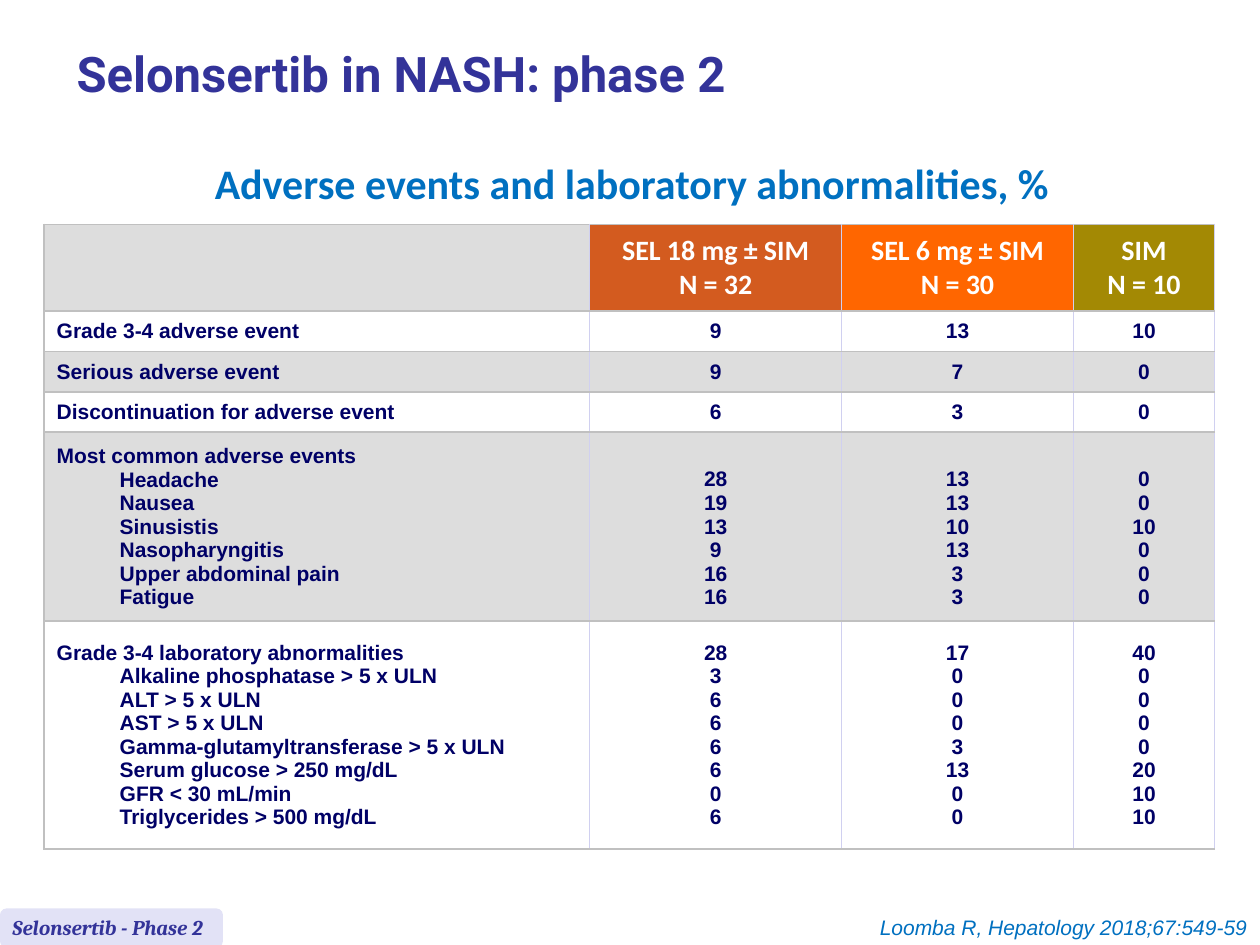
from dataclasses import dataclass

from pptx import Presentation
from pptx.dml.color import RGBColor as Rgb
from pptx.enum.shapes import MSO_AUTO_SHAPE_TYPE as Preset
from pptx.enum.text import MSO_VERTICAL_ANCHOR as Anchor
from pptx.enum.text import PP_PARAGRAPH_ALIGNMENT as Align
from pptx.oxml.xmlchemy import OxmlElement as Element
from pptx.util import Inches, Pt


@dataclass(frozen=True)
class Theme:
    indigo: str = "333399"
    blue: str = "0070C0"
    navy: str = "000066"
    white: str = "FFFFFF"
    band: str = "DDDDDD"
    tag: str = "E2E2F6"
    rule: str = "C0C0C0"
    divider: str = "D0D0F0"
    arms: tuple = ("D35B1F", "FF6600", "A38904")
    title: int = 28
    subtitle: int = 24
    header: int = 16
    body: int = 12


THEME = Theme()
SLIDE_WIDTH, SLIDE_HEIGHT = Inches(10), Inches(7.5)

TITLE_FONT = dict(name="Roboto", size=THEME.title, bold=True, color=THEME.indigo)
SUBTITLE_FONT = dict(name="Calibri", size=THEME.subtitle, bold=True, color=THEME.blue)
HEADER_FONT = dict(name="Calibri", size=THEME.header, bold=True, color=THEME.white)
BODY_FONT = dict(name="Arial", size=THEME.body, bold=True, color=THEME.navy)
TAG_FONT = dict(name="Cambria", size=THEME.body, bold=True, italic=True, color=THEME.indigo)
CITATION_FONT = dict(name="Arial", size=THEME.body, italic=True, color=THEME.blue)

COLUMN_SHARES = (43.3, 20, 18.4, 11.2)
ROW_SHARES = (9.2, 4.27, 4.27, 4.27, 19.87, 24.13)
LINE_SHARE = 2.48

ARMS = (("SEL 18 mg ± SIM", "N = 32"), ("SEL 6 mg ± SIM", "N = 30"), ("SIM", "N = 10"))
EVENT_GROUPS = (
    [("Grade 3-4 adverse event", 9, 13, 10)],
    [("Serious adverse event", 9, 7, 0)],
    [("Discontinuation for adverse event", 6, 3, 0)],
    [
        ("Most common adverse events",),
        ("Headache", 28, 13, 0),
        ("Nausea", 19, 13, 0),
        ("Sinusistis", 13, 10, 10),
        ("Nasopharyngitis", 9, 13, 0),
        ("Upper abdominal pain", 16, 3, 0),
        ("Fatigue", 16, 3, 0),
    ],
    [
        ("Grade 3-4 laboratory abnormalities", 28, 17, 40),
        ("Alkaline phosphatase > 5 x ULN", 3, 0, 0),
        ("ALT > 5 x ULN", 6, 0, 0),
        ("AST > 5 x ULN", 6, 0, 0),
        ("Gamma-glutamyltransferase > 5 x ULN", 6, 3, 0),
        ("Serum glucose > 250 mg/dL", 6, 13, 20),
        ("GFR < 30 mL/min", 0, 0, 10),
        ("Triglycerides > 500 mg/dL", 6, 0, 10),
    ],
)


def across(percent):
    return round(SLIDE_WIDTH * percent / 100)


def down(percent):
    return round(SLIDE_HEIGHT * percent / 100)


def area(left, top, width, height):
    return across(left), down(top), across(width), down(height)


def apply(target, values):
    for attribute, value in values.items():
        setattr(target, attribute, value)


def paint(fill, color):
    fill.solid()
    fill.fore_color.rgb = Rgb.from_string(color)


def write_lines(frame, lines, font, **layout):
    for index, line in enumerate(lines):
        paragraph = frame.paragraphs[0] if index == 0 else frame.add_paragraph()
        apply(paragraph, layout)
        run = paragraph.add_run()
        run.text = str(line)
        apply(run.font, {**font, "size": Pt(font["size"])} | {}) if "color" not in font else style(run.font, font)


def style(target, font):
    plain = {key: value for key, value in font.items() if key not in ("size", "color")}
    apply(target, {**plain, "size": Pt(font["size"])})
    target.color.rgb = Rgb.from_string(font["color"])


def add_text(slide, place, text, font, wrap=True, anchor=Anchor.TOP, **layout):
    frame = slide.shapes.add_textbox(*place).text_frame
    apply(frame, {"word_wrap": wrap, "vertical_anchor": anchor})
    write_lines(frame, [text], font, **layout)


def add_tag(slide, place, text):
    tab = slide.shapes.add_shape(Preset.ROUNDED_RECTANGLE, *place)
    tab.shadow.inherit = False
    tab.line.fill.background()
    paint(tab.fill, THEME.tag)
    add_text(slide, place, text, TAG_FONT)


def add_borders(cell, colors):
    properties = cell._tc.get_or_add_tcPr()
    for position, (side, color) in enumerate(colors.items()):
        border = Element(f"a:ln{side}")
        border.set("w", str(Pt(1)))
        solid, shade = Element("a:solidFill"), Element("a:srgbClr")
        shade.set("val", color)
        solid.append(shade)
        border.append(solid)
        properties.insert(position, border)


def format_cell(cell, fill, column):
    cell.vertical_anchor = Anchor.MIDDLE
    paint(cell.fill, fill)
    left = THEME.divider if column else THEME.rule
    add_borders(cell, {"L": left, "R": THEME.divider, "T": THEME.rule, "B": THEME.rule})


def fill_header(table):
    for column, fill in enumerate((THEME.band, *THEME.arms)):
        cell = table.cell(0, column)
        format_cell(cell, fill, column)
        if column:
            write_lines(cell.text_frame, ARMS[column - 1], HEADER_FONT,
                        alignment=Align.CENTER, line_spacing=Pt(19.6))


def fill_group(table, row, events):
    for column in range(len(COLUMN_SHARES)):
        cell = table.cell(row, column)
        format_cell(cell, THEME.white if row % 2 else THEME.band, column)
        entries = [event[column] for event in events if column < len(event)]
        layout = {"alignment": Align.CENTER} if column else {}
        write_lines(cell.text_frame, entries, BODY_FONT, **layout)
        unvalued = len(events) - len(entries)
        if unvalued:
            cell.margin_top = Inches(0.05) + unvalued * down(LINE_SHARE)
    for paragraph in table.cell(row, 0).text_frame.paragraphs[1:]:
        paragraph.level = 1
        apply_indent(paragraph)


def apply_indent(paragraph):
    properties = paragraph._p.get_or_add_pPr()
    for key, value in {"marL": Inches(0.5), "indent": 0}.items():
        properties.set(key, str(int(value)))


def add_events_table(slide):
    place = area(3.5, 23.73, sum(COLUMN_SHARES), sum(ROW_SHARES))
    table = slide.shapes.add_table(len(ROW_SHARES), len(COLUMN_SHARES), *place).table
    apply(table, {"first_row": False, "horz_banding": False})
    for column, share in zip(table.columns, COLUMN_SHARES):
        column.width = across(share)
    for row, share in zip(table.rows, ROW_SHARES):
        row.height = down(share)
    fill_header(table)
    for row, events in enumerate(EVENT_GROUPS, start=1):
        fill_group(table, row, events)


def main():
    deck = Presentation()
    apply(deck, {"slide_width": SLIDE_WIDTH, "slide_height": SLIDE_HEIGHT})
    slide = deck.slides.add_slide(deck.slide_layouts[6])
    add_text(slide, area(15.7, 18.53, 68.9, 4.67), "Adverse events and laboratory abnormalities, %",
             SUBTITLE_FONT, wrap=False, alignment=Align.CENTER, line_spacing=Pt(15.2))
    add_events_table(slide)
    add_text(slide, area(5.1, 1.07, 91.3, 14.27), "Selonsertib in NASH: phase 2",
             TITLE_FONT, anchor=Anchor.MIDDLE, line_spacing=0.85)
    add_tag(slide, area(0, 96.13, 17.7, 4.13), "Selonsertib - Phase 2")
    add_text(slide, area(26.4, 96.13, 73.6, 4), "Loomba R, Hepatology 2018;67:549-59",
             CITATION_FONT, alignment=Align.RIGHT)
    deck.save("out.pptx")


if __name__ == "__main__":
    main()
